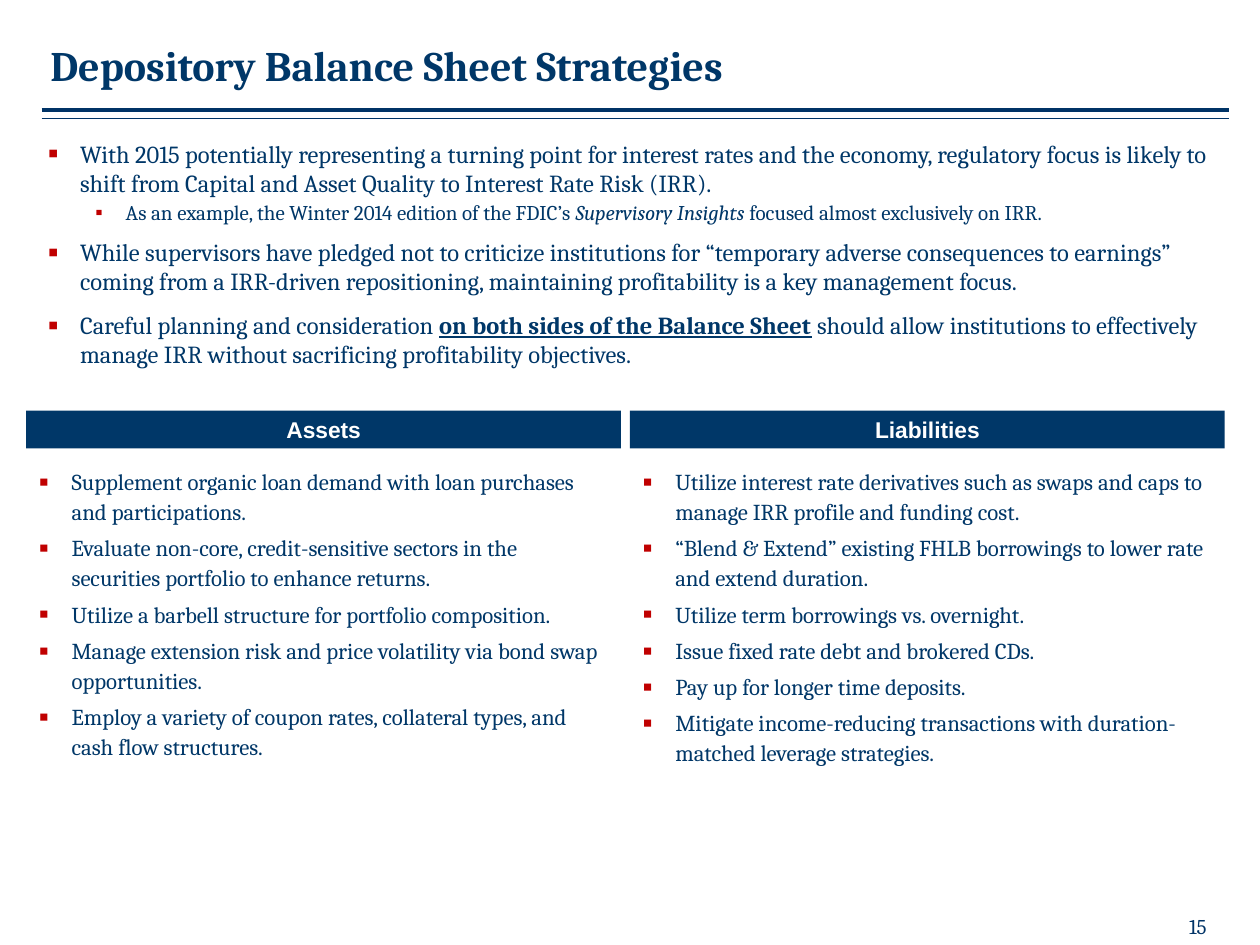
from lxml.etree import SubElement
from pptx import Presentation
from pptx.dml.color import RGBColor
from pptx.enum.shapes import MSO_CONNECTOR, MSO_SHAPE
from pptx.enum.text import MSO_ANCHOR, MSO_AUTO_SIZE, PP_ALIGN
from pptx.oxml.ns import qn
from pptx.util import Cm, Pt

NAVY = RGBColor(0x00, 0x37, 0x68)
RULE_NAVY = RGBColor(0x00, 0x33, 0x66)
RED = RGBColor(0xC0, 0x00, 0x00)
WHITE = RGBColor(0xFF, 0xFF, 0xFF)
SERIF, SANS = "Cambria", "Arial"

SUMMARY = [
    (0, ["With 2015 potentially representing a turning point for interest rates and the economy, "
         "regulatory focus is likely to shift from Capital and Asset Quality to Interest Rate Risk (IRR)."]),
    (1, ["As an example, the Winter 2014 edition of the FDIC’s ", ("Supervisory Insights", "italic"),
         " focused almost exclusively on IRR."]),
    (0, ["While supervisors have pledged not to criticize institutions for “temporary adverse "
         "consequences to earnings” coming from a IRR-driven repositioning, maintaining "
         "profitability is a key management focus."]),
    (0, ["Careful planning and consideration ", ("on both sides of the Balance Sheet", "strong"),
         " should allow institutions to effectively manage IRR without sacrificing profitability objectives."]),
]
ASSETS = [
    "Supplement organic loan demand with loan purchases and participations.",
    "Evaluate non-core, credit-sensitive sectors in the securities portfolio to enhance returns.",
    "Utilize a barbell structure for portfolio composition.",
    "Manage extension risk and price volatility via bond swap opportunities.",
    "Employ a variety of coupon rates, collateral types, and cash flow structures.",
]
LIABILITIES = [
    "Utilize interest rate derivatives such as swaps and caps to manage IRR profile and funding cost.",
    "“Blend & Extend” existing FHLB borrowings to lower rate and extend duration.",
    "Utilize term borrowings vs. overnight.",
    "Issue fixed rate debt and brokered CDs.",
    "Pay up for longer time deposits.",
    "Mitigate income-reducing transactions with duration-matched leverage strategies.",
]


def place(box, left, top, width, height):
    box.left, box.top, box.width, box.height = left, top, width, height
    frame = box.text_frame
    frame.word_wrap = True
    frame.auto_size = MSO_AUTO_SIZE.NONE
    frame.vertical_anchor = MSO_ANCHOR.TOP
    return frame


def set_font(para, name, size, color, bold=False):
    font = para.font
    font.name, font.size, font.bold = name, Pt(size), bold
    font.color.rgb = color


def set_bullet(para, indent, hanging, percent):
    properties = para._p.get_or_add_pPr()
    properties.set("marL", str(indent))
    properties.set("indent", str(-hanging))
    color = SubElement(properties, qn("a:buClr"))
    SubElement(color, qn("a:srgbClr"), val=str(RED))
    SubElement(properties, qn("a:buSzPct"), val=str(percent * 1000))
    SubElement(properties, qn("a:buFont"), typeface=SANS)
    SubElement(properties, qn("a:buChar"), char="▪")


def next_paragraph(frame, index):
    return frame.add_paragraph() if index else frame.paragraphs[0]


def add_header(page, left, top, width):
    frame = place(page.shapes.title, left - Cm(0.08), top, Cm(14.48), Cm(1.27))
    frame.text = "Depository Balance Sheet Strategies"
    para = frame.paragraphs[0]
    para.alignment = PP_ALIGN.LEFT
    set_font(para, SERIF, 24, NAVY, bold=True)
    for offset, weight in ((Cm(1.56), 2), (Cm(1.73), 1)):
        y = top + offset
        rule = page.shapes.add_connector(MSO_CONNECTOR.STRAIGHT, left, y, left + width, y)
        rule.line.color.rgb = RULE_NAVY
        rule.line.width = Pt(weight)
        SubElement(rule._element.spPr, qn("a:effectLst"))


def add_summary(body, left, top, width, height):
    frame = place(body, left, top, width, height)
    for index, (level, pieces) in enumerate(SUMMARY):
        para = next_paragraph(frame, index)
        para.level = level
        para.line_spacing = 0.8 if level else 1.0
        para.space_before = Pt(4 if index > 1 else 0)
        para.space_after = Pt(3 if level else 4)
        if level:
            set_bullet(para, Cm(1.57), Cm(0.61), 100)
        else:
            set_bullet(para, Cm(0.65), Cm(0.65), 125)
        set_font(para, SERIF, 12 if level else 14, NAVY)
        for piece in pieces:
            text, style = (piece, None) if isinstance(piece, str) else piece
            span = para.add_run()
            span.text = text
            if style == "italic":
                span.font.italic = True
            elif style == "strong":
                span.font.bold = span.font.underline = True


def add_column(page, body, heading, items, left, top, width):
    bar = page.shapes.add_shape(MSO_SHAPE.RECTANGLE, left, top, width, Cm(0.76))
    bar.shadow.inherit = False
    bar.fill.solid()
    bar.fill.fore_color.rgb = NAVY
    bar.line.fill.background()
    bar.text_frame.text = heading
    bar.text_frame.vertical_anchor = MSO_ANCHOR.MIDDLE
    title = bar.text_frame.paragraphs[0]
    title.alignment = PP_ALIGN.CENTER
    set_font(title, SANS, 13, WHITE, bold=True)

    frame = place(body, left, top + Cm(0.97), width, Cm(7.62))
    for index, item in enumerate(items):
        para = next_paragraph(frame, index)
        para.text = item
        para.line_spacing = 1.1
        para.space_before = Pt(0)
        para.space_after = Pt(3.5)
        set_bullet(para, Cm(0.66), Cm(0.66), 125)
        set_font(para, SERIF, 13, NAVY)


def add_page_number(page, left, top):
    frame = place(page.shapes.add_textbox(left, top, Cm(1.5), Cm(0.76)), left, top, Cm(1.5), Cm(0.76))
    frame.text = "15"
    set_font(frame.paragraphs[0], SERIF, 12, RULE_NAVY)


def main():
    deck = Presentation()
    deck.slide_width, deck.slide_height = Cm(25.4), Cm(19.05)
    page = deck.slides.add_slide(deck.slide_layouts.get_by_name("Comparison"))
    bodies = {holder.placeholder_format.idx: holder for holder in page.placeholders}
    spare = bodies[3]._element
    spare.getparent().remove(spare)

    add_header(page, Cm(0.84), Cm(0.66), Cm(23.93))
    add_summary(bodies[1], Cm(0.71), Cm(2.67), Cm(24.23), Cm(5.08))
    left, width, gap = Cm(0.53), Cm(11.99), Cm(0.18)
    columns = ((bodies[2], "Assets", ASSETS), (bodies[4], "Liabilities", LIABILITIES))
    for index, (body, heading, items) in enumerate(columns):
        add_column(page, body, heading, items, left + index * (width + gap), Cm(8.28), width)
    add_page_number(page, Cm(23.72), Cm(18.29))
    deck.save("out.pptx")


if __name__ == "__main__":
    main()
